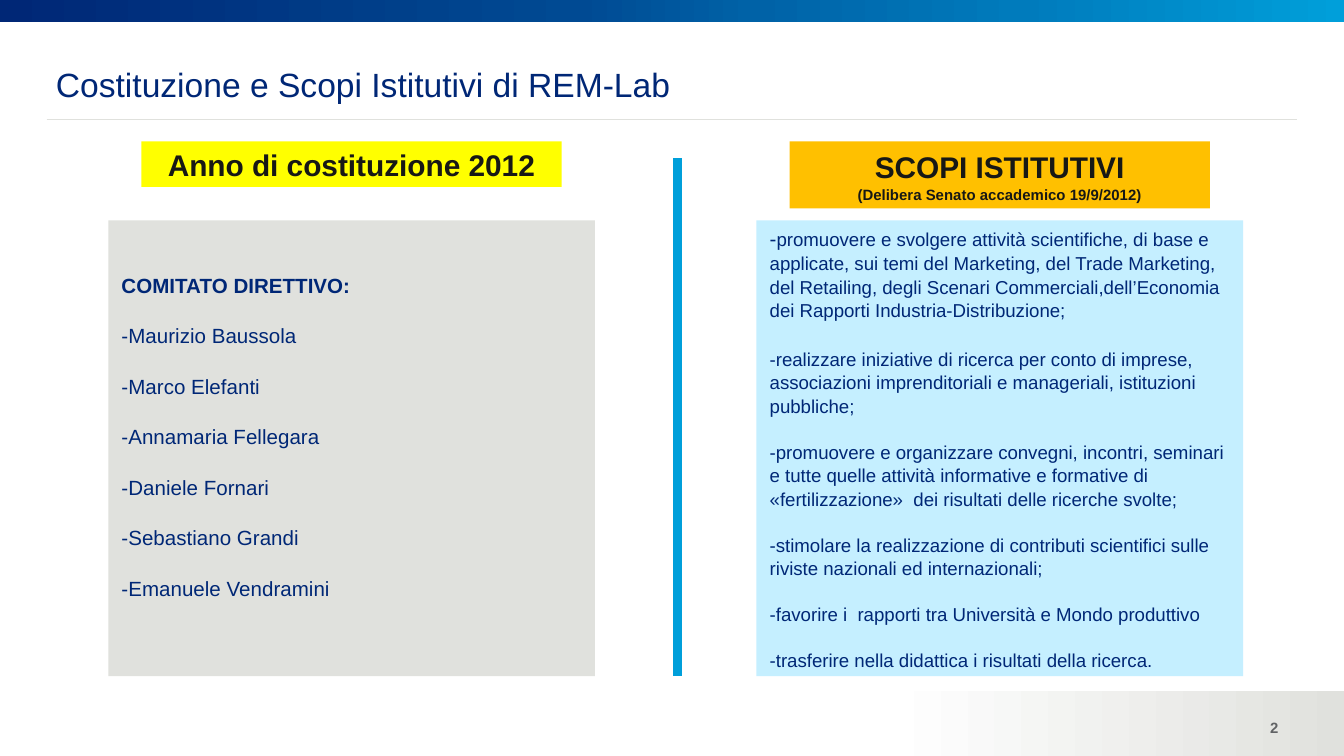
import collections

import lxml.etree
import pptx
import pptx.dml.color
import pptx.enum.shapes
import pptx.enum.text
import pptx.oxml.ns
import pptx.util

Pt = pptx.util.Pt
Align = pptx.enum.text.PP_ALIGN
Anchor = pptx.enum.text.MSO_ANCHOR
Rect = pptx.enum.shapes.MSO_SHAPE.RECTANGLE
qn = pptx.oxml.ns.qn

Theme = collections.namedtuple(
    "Theme", "font navy cyan grey ink dim white yellow amber sky head label body list note")
theme = Theme(font="Arial", navy="002776", cyan="009FDA", grey="E0E1DD", ink="171815",
              dim="616365", white="FFFFFF", yellow="FFFF00", amber="FFC000", sky="C5EFFF",
              head=18, label=16, body=10, list=11, note=8)


def rgb(code):
    return pptx.dml.color.RGBColor.from_string(code)


def dress(item, form):
    for key, value in form.items():
        setattr(item, key, value)


class Deck:
    """Holds the theme and the current slide, and draws each kind of element."""

    def __init__(self, theme, width, height):
        self.theme = theme
        self.show = pptx.Presentation()
        dress(self.show, {"slide_width": Pt(width), "slide_height": Pt(height)})
        self.slide = self.show.slides.add_slide(self.show.slide_layouts[5])

    def letter(self, shape, paras, color, align=Align.LEFT, bold=False, gaps=(), **frame):
        text = shape.text_frame
        form = {"word_wrap": True, "auto_size": pptx.enum.text.MSO_AUTO_SIZE.NONE,
                "vertical_anchor": Anchor.MIDDLE}
        dress(text, {**form, **frame})
        for place, runs in enumerate(paras):
            para = text.add_paragraph() if place else text.paragraphs[0]
            gap = gaps[place - 1] if place and gaps else 0
            dress(para, {"alignment": align, "line_spacing": 1.05,
                         "space_before": Pt(gap), "space_after": Pt(0)})
            for words, size, *heavy in runs:
                run = para.add_run()
                run.text = words
                dress(run.font, {"name": self.theme.font, "size": Pt(size),
                                 "bold": heavy[0] if heavy else bold})
                run.font.color.rgb = rgb(color)

    def title(self, words, box, **frame):
        shape = self.slide.shapes.title
        dress(shape, dict(zip(("left", "top", "width", "height"), map(Pt, box))))
        self.letter(shape, [[(words, self.theme.head)]], self.theme.navy, **frame)

    def label(self, words, box):
        shape = self.slide.shapes.add_textbox(*map(Pt, box))
        self.letter(shape, [[(words, self.theme.note)]], self.theme.dim,
                    Align.RIGHT, True, vertical_anchor=Anchor.TOP)

    def panel(self, box, fill=None):
        shape = self.slide.shapes.add_shape(Rect, *map(Pt, box))
        shape.shadow.inherit = False
        shape.line.fill.background()
        if fill:
            shape.fill.solid()
            shape.fill.fore_color.rgb = rgb(fill)
        return shape

    def band(self, box, stops):
        shape = self.panel(box)
        shape.fill.gradient()
        shape.fill.gradient_angle = 0
        tray = shape._element.spPr.find(".//" + qn("a:gsLst"))
        tray[:] = []
        for pos, color in stops:
            stop = lxml.etree.SubElement(tray, qn("a:gs"), pos=str(pos * 1000))
            lxml.etree.SubElement(stop, qn("a:srgbClr"), val=color)

    def rule(self, start, end, color, width):
        kind = pptx.enum.shapes.MSO_CONNECTOR.STRAIGHT
        line = self.slide.shapes.add_connector(kind, *map(Pt, start + end))
        line.line.width = Pt(width)
        line.line.color.rgb = rgb(color)
        lxml.etree.SubElement(line._element.spPr, qn("a:effectLst"))


def main():
    deck = Deck(theme, 720, 405)
    deck.band((0, 370, 720, 35), [(0, theme.white), (66, theme.white), (100, theme.grey)])
    deck.label("2", (647, 381, 45, 21.5))
    deck.band((0, -0.5, 720, 12.5), [(0, theme.navy), (43, "004A93"), (56, "0062A7"),
                                    (76, "007BBC"), (100, theme.cyan)])
    deck.rule((25, 64), (695, 64), theme.grey, 0.75)
    deck.rule((363, 84.75), (363, 362), theme.cyan, 4.5)
    deck.title("Costituzione e Scopi Istitutivi di REM-Lab", (25, 20, 686, 36),
               vertical_anchor=Anchor.BOTTOM, margin_left=Pt(5), margin_right=0,
               margin_top=0, margin_bottom=0)

    names = ["Maurizio Baussola", "Marco Elefanti", "Annamaria Fellegara",
             "Daniele Fornari", "Sebastiano Grandi", "Emanuele Vendramini"]
    board = [[("COMITATO DIRETTIVO:", theme.list, True)]]
    board += [[("-" + name, theme.list)] for name in names]
    goals = [
        "-realizzare iniziative di ricerca per conto di imprese, associazioni "
        "imprenditoriali e manageriali, istituzioni pubbliche;",
        "-promuovere e organizzare convegni, incontri, seminari e tutte quelle attività "
        "informative e formative di «fertilizzazione»  dei risultati delle ricerche svolte;",
        "-stimolare la realizzazione di contributi scientifici sulle  riviste nazionali "
        "ed internazionali;",
        "-favorire i  rapporti tra Università e Mondo produttivo",
        "-trasferire nella didattica i risultati della ricerca.",
    ]
    first = ("promuovere e svolgere attività scientifiche, di base e applicate, sui temi "
             "del Marketing, del Trade Marketing, del Retailing, degli Scenari "
             "Commerciali,dell’Economia dei Rapporti Industria-Distribuzione;")
    aims = [[("-", theme.list), (first, theme.body)]]
    aims += [[(goal, theme.body)] for goal in goals]

    year = [[("Anno di costituzione 2012", theme.label)]]
    scope = [[("SCOPI ISTITUTIVI", theme.label)],
             [("(Delibera Senato accademico 19/9/2012)", theme.note)]]
    sides = [
        (58, year, 24.5, theme.yellow, board, theme.grey, [13.2] * len(names), 16.8),
        (405.25, scope, 36, theme.amber, aims, theme.sky, [13.2] + [12] * 4, 3.6),
    ]
    for left, head, tall, tint, paras, fill, gaps, foot in sides:
        tag = deck.panel((left + 17.75, 75.75, 225.25, tall), tint)
        deck.letter(tag, head, theme.ink, Align.CENTER, True)
        card = deck.panel((left, 118, 260.75, 244.25), fill)
        deck.letter(card, paras, theme.navy, gaps=gaps, margin_bottom=Pt(foot))
    deck.show.save("out.pptx")


if __name__ == "__main__":
    main()
